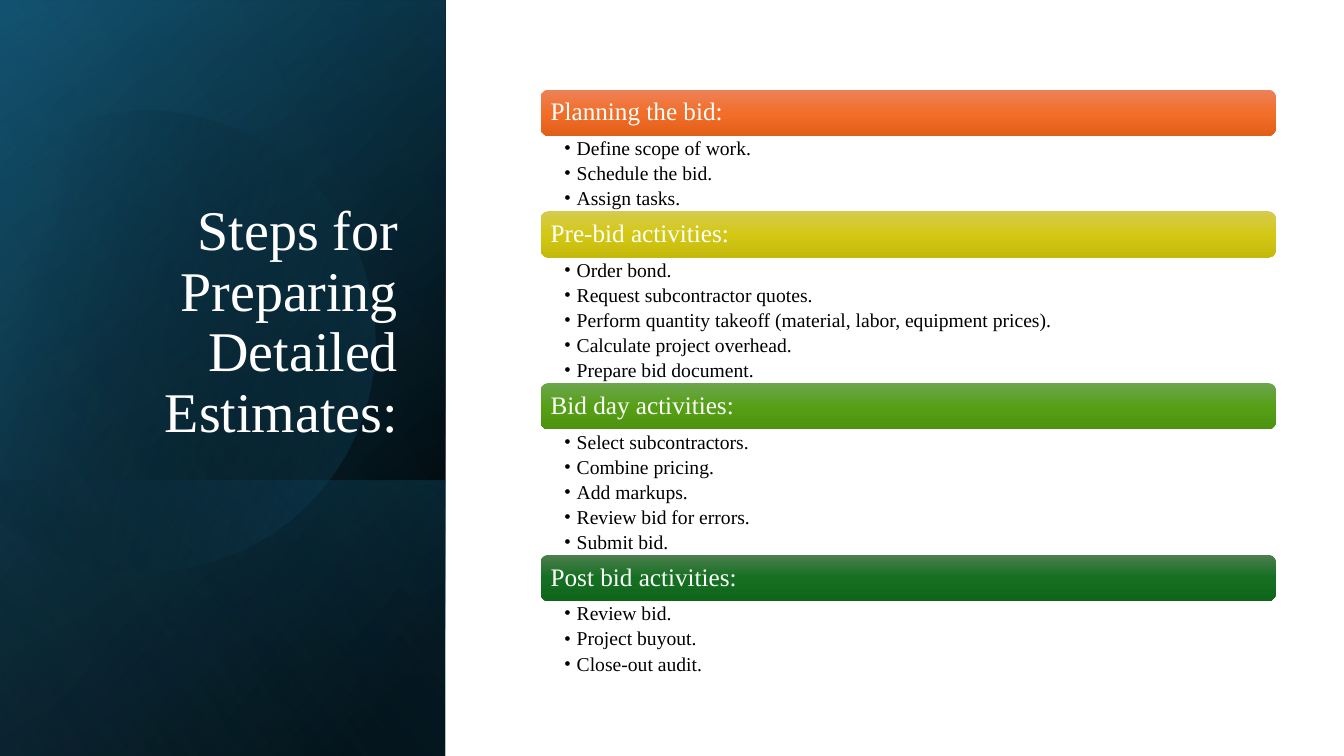
from dataclasses import dataclass
from math import cos, radians, sin

from lxml import etree
from pptx import Presentation
from pptx import util as u
from pptx.dml import color
from pptx.enum import shapes, text
from pptx.oxml import ns

Pt = u.Pt


@dataclass(frozen=True)
class Theme:
    font: str = "Times New Roman"
    light: str = "FFFFFF"
    dark: str = "000000"
    blue: str = "156082"
    deep: str = "104862"
    sky: str = "46B1E1"
    title: float = 40
    head: float = 18
    item: float = 14


T = Theme()

# left, top, width, height, angle, stops of (place, colour, opacity)
PANELS = [
    (-111, 111, 540, 318, 50, [(8, T.dark, 100), (100, T.deep, 100)]),
    (-111, 111.5, 540, 318, 30, [(0, T.dark, 0), (99, T.blue, 46)]),
    (60.5, 282.6, 197, 318, 130, [(2, T.blue, 29), (100, T.dark, 30)]),
]
GLOW = (-111, 111, 540, 318, 120, [(0, T.dark, 0), (99, T.sky, 11)])

# Each row continues the disc outline: one point is a line, three are a curve
DISC = [
    [(107.3, 79.2)],
    [(177.1, 80.6), (241.2, 127.4), (261.4, 198)],
    [(286.6, 285.8), (236.2, 376.6), (149, 401.8)],
    [(94.3, 417.6), (38.2, 403.9), (-2.2, 370.1)],
    [(-10.8, 362.2)],
    [(-10.8, 126)],
    [(0, 115.9)],
    [(16.6, 102.2), (36, 92.2), (57.6, 85.7)],
    [(74.2, 81.4), (90.7, 79.2), (107.3, 79.2)],
]
DISC_MID = (114.1, 240.8)
DISC_TURN = -16.1

STEPS = [
    ("Planning the bid:", ("ED8257", "F26E29", "E25F1A"),
     ["Define scope of work.", "Schedule the bid.", "Assign tasks."]),
    ("Pre-bid activities:", ("D5CB4E", "D4C815", "C4B90B"),
     ["Order bond.", "Request subcontractor quotes.",
      "Perform quantity takeoff (material, labor, equipment prices).",
      "Calculate project overhead.", "Prepare bid document."]),
    ("Bid day activities:", ("6DA64E", "56A017", "4C930F"),
     ["Select subcontractors.", "Combine pricing.", "Add markups.",
      "Review bid for errors.", "Submit bid."]),
    ("Post bid activities:", ("4D7E50", "156F21", "0F661B"),
     ["Review bid.", "Project buyout.", "Close-out audit."]),
]
LEFT, TOP, WIDTH, BAR, ROW = 386.3, 64, 525, 33.1, 17.92


def put(thing, **form):
    for key, value in form.items():
        setattr(thing, key, value)


def blend(shape, angle, stops):
    """Fill with a linear gradient, clockwise angle, and drop line and shadow."""
    shape.shadow.inherit = False
    shape.line.fill.background()
    shape.fill.background()
    grad = etree.Element(ns.qn("a:gradFill"), rotWithShape="1")
    marks = etree.SubElement(grad, ns.qn("a:gsLst"))
    for place, tone, alpha in stops:
        mark = etree.SubElement(marks, ns.qn("a:gs"), pos=str(place * 1000))
        tint = etree.SubElement(mark, ns.qn("a:srgbClr"), val=tone)
        if alpha < 100:
            etree.SubElement(tint, ns.qn("a:alpha"), val=str(alpha * 1000))
    etree.SubElement(grad, ns.qn("a:lin"), ang=str(round(angle * 60000)), scaled="0")
    props = shape.element.spPr
    props.replace(props.find(ns.qn("a:noFill")), grad)


def panel(slide, left, top, width, height, angle, stops):
    """Add a rectangle that is mirrored and turned upright."""
    rect = slide.shapes.add_shape(shapes.MSO_SHAPE.RECTANGLE,
                                  Pt(left), Pt(top), Pt(width), Pt(height))
    rect.rotation = 90
    rect.element.spPr.find(ns.qn("a:xfrm")).set("flipH", "1")
    blend(rect, angle, stops)


def trace(rows, count=16):
    """Turn lines and cubic curves into a list of points."""
    points = []
    for row in rows:
        if len(row) == 1:
            points += row
            continue
        knots = [points[-1], *row]
        for step in range(1, count + 1):
            t = step / count
            parts = ((1 - t) ** 3, 3 * t * (1 - t) ** 2, 3 * t * t * (1 - t), t ** 3)
            points.append(tuple(sum(p * k[axis] for p, k in zip(parts, knots))
                                for axis in (0, 1)))
    return points


def disc(slide):
    turn = radians(-DISC_TURN)
    mid_x, mid_y = DISC_MID
    points = []
    for x, y in trace(DISC):
        dx, dy = x - mid_x, y - mid_y
        points.append((Pt(mid_x + dx * cos(turn) - dy * sin(turn)),
                       Pt(mid_y + dx * sin(turn) + dy * cos(turn))))
    pen = slide.shapes.build_freeform(*points[0])
    pen.add_line_segments(points[1:], close=True)
    shape = pen.convert_to_shape()
    shape.rotation = DISC_TURN
    blend(shape, 30, [(29, T.dark, 0), (100, T.blue, 43)])


def write(para, words, size, tone, **form):
    run = para.add_run()
    run.text = words
    put(run.font, name=T.font, size=Pt(size))
    run.font.color.rgb = color.RGBColor.from_string(tone)
    put(para, line_spacing=0.9, **form)


def bullet(para):
    """Hang a bullet set in the size and font of the text."""
    props = para._p.get_or_add_pPr()
    props.set("marL", str(Pt(9)))
    props.set("indent", str(-Pt(9)))
    etree.SubElement(props, ns.qn("a:buSzPct"), val="100000")
    etree.SubElement(props, ns.qn("a:buFont"), typeface=T.font)
    etree.SubElement(props, ns.qn("a:buChar"), char="•")
    etree.SubElement(para._p, ns.qn("a:endParaRPr"), sz=str(T.item * 100))


def title(slide, words):
    shape = slide.shapes.title
    put(shape, left=Pt(46), top=Pt(132.5), width=Pt(245.5), height=Pt(188.6))
    put(shape.text_frame, word_wrap=True, auto_size=text.MSO_AUTO_SIZE.NONE,
        vertical_anchor=text.MSO_ANCHOR.BOTTOM)
    write(shape.text_frame.paragraphs[0], words, T.title, T.light,
          alignment=text.PP_ALIGN.RIGHT)
    shape.element.getparent().append(shape.element)


def bar(slide, top, words, tones):
    shape = slide.shapes.add_shape(shapes.MSO_SHAPE.ROUNDED_RECTANGLE,
                                   Pt(LEFT), Pt(top), Pt(WIDTH), Pt(BAR))
    blend(shape, 90, [(50 * i, tone, 100) for i, tone in enumerate(tones)])
    put(shape.text_frame, word_wrap=True, margin_left=Pt(5.4),
        vertical_anchor=text.MSO_ANCHOR.MIDDLE)
    write(shape.text_frame.paragraphs[0], words, T.head, T.light,
          alignment=text.PP_ALIGN.LEFT)


def items(slide, top, lines):
    box = slide.shapes.add_textbox(Pt(LEFT), Pt(top), Pt(WIDTH), Pt(ROW * len(lines)))
    frame = box.text_frame
    put(frame, word_wrap=True, margin_left=Pt(16.6), margin_right=Pt(10),
        margin_top=Pt(2), margin_bottom=Pt(2))
    for i, line in enumerate(lines):
        para = frame.add_paragraph() if i else frame.paragraphs[0]
        write(para, line, T.item, T.dark, level=1, space_after=Pt(2.8))
        bullet(para)


def main():
    deck = Presentation()
    put(deck, slide_width=Pt(960), slide_height=Pt(540))
    slide = deck.slides.add_slide(deck.slide_layouts.get_by_name("Title Only"))
    for form in PANELS:
        panel(slide, *form)
    disc(slide)
    panel(slide, *GLOW)
    title(slide, "Steps for Preparing Detailed Estimates:")
    top = TOP
    for head, tones, lines in STEPS:
        bar(slide, top, head, tones)
        items(slide, top + BAR, lines)
        top += BAR + ROW * len(lines)
    deck.save("out.pptx")


if __name__ == "__main__":
    main()
